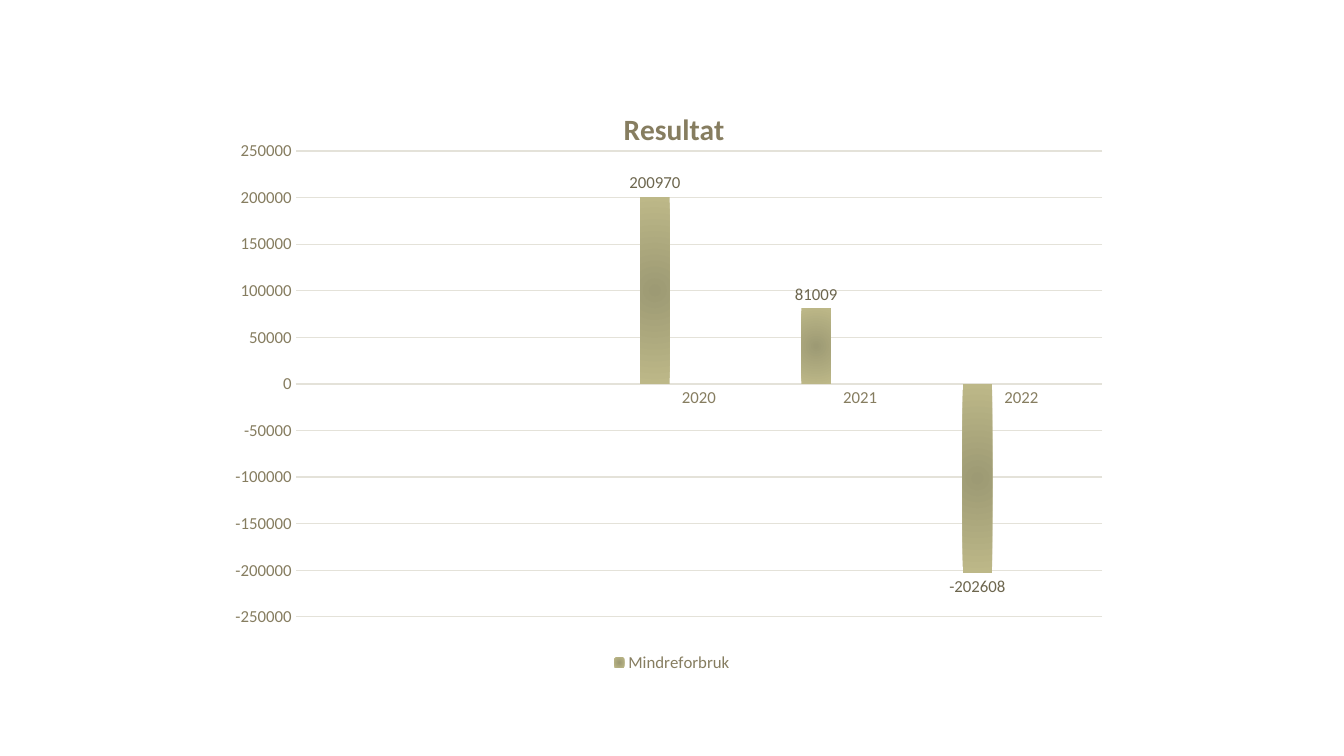
from dataclasses import dataclass

from lxml.etree import SubElement
from pptx import Presentation
from pptx.chart.data import CategoryChartData
from pptx.dml.color import RGBColor
from pptx.enum.chart import XL_CHART_TYPE as ChartType
from pptx.enum.chart import XL_LABEL_POSITION as LabelPosition
from pptx.enum.chart import XL_LEGEND_POSITION as LegendPosition
from pptx.enum.chart import XL_TICK_MARK as TickMark
from pptx.oxml import parse_xml
from pptx.oxml.ns import nsdecls, qn
from pptx.util import Inches, Pt

WIDTH, HEIGHT = Inches(13.33), Inches(7.5)
FONT = "Calibri"
COLORS = {
    "base": "2E2B21",
    "text": "867D60",
    "label": "6D664E",
    "grid": "E4E2D9",
}
YEARS = ["", "", "2020", "2021", "2022"]
LIMIT, STEP = 250000, 50000


@dataclass(frozen=True)
class Series:
    name: str
    values: tuple
    inner: str
    outer: str


BLANK = (None,) * len(YEARS)
SERIES = [
    Series("Mindreforbruk", (None, None, 200970, 81009, -202608), "9D9A74", "BDB888"),
    Series("Series 2", BLANK, "91B1B0", "A2CDCC"),
    Series("Series 3", BLANK, "C4BD65", "ECE271"),
    Series("Series 4", BLANK, "8B9892", "A1B2AB"),
]


def style_font(font, color: str, size: float = 12, bold: bool = False) -> None:
    font.name = FONT
    font.size = Pt(size)
    font.bold = bold
    font.color.rgb = RGBColor.from_string(COLORS[color])


def style_line(line, width: float) -> None:
    line.color.rgb = RGBColor.from_string(COLORS["grid"])
    line.width = Pt(width)


def manual_layout(target: str = "", **shares: float) -> object:
    layout = parse_xml(f"<c:layout {nsdecls('c')}><c:manualLayout/></c:layout>")
    manual = layout[0]
    if target:
        SubElement(manual, qn("c:layoutTarget")).set("val", target)
    for side in "xy":
        SubElement(manual, qn(f"c:{side}Mode")).set("val", "edge")
    for name, share in shares.items():
        SubElement(manual, qn(f"c:{name}")).set("val", str(share))
    return layout


def replace_layout(parent, layout, index: int) -> None:
    for old in parent.findall(qn("c:layout")):
        parent.remove(old)
    parent.insert(index, layout)


def style_series(bars, series: Series) -> None:
    bars.invert_if_negative = False
    fill = bars.format.fill
    fill.gradient()
    for stop, color in zip(fill.gradient_stops, (series.inner, series.outer)):
        stop.color.rgb = RGBColor.from_string(color)
    gradient = next(bars._element.iter(qn("a:gradFill")))
    gradient.remove(gradient.find(qn("a:lin")))
    circle = SubElement(gradient, qn("a:path"), {"path": "circle"})
    center = SubElement(circle, qn("a:fillToRect"))
    for side in "ltrb":
        center.set(side, "100000")
    labels = bars.data_labels
    labels.show_value = True
    labels.position = LabelPosition.OUTSIDE_END
    style_font(labels.font, "label")


def style_axes(chart) -> None:
    for axis in (chart.category_axis, chart.value_axis):
        axis.major_tick_mark = axis.minor_tick_mark = TickMark.NONE
        style_font(axis.tick_labels.font, "text")
    style_line(chart.category_axis.format.line, 1)
    values = chart.value_axis
    values.minimum_scale, values.maximum_scale = -LIMIT, LIMIT
    values.major_unit = STEP
    values.format.line.fill.background()
    style_line(values.major_gridlines.format.line, 0.75)


def style_title(chart, text: str) -> None:
    span = chart.chart_title.text_frame.paragraphs[0].add_run()
    span.text = text
    style_font(span.font, "text", size=21, bold=True)
    chart.chart_title.include_in_layout = False
    replace_layout(chart.chart_title._element, manual_layout(x=0.44, y=0.04), 1)


def style_legend(chart) -> None:
    chart.has_legend = True
    legend = chart.legend
    legend.position = LegendPosition.BOTTOM
    legend.include_in_layout = False
    style_font(legend.font, "text")
    for index in range(1, len(SERIES)):
        entry = parse_xml(
            f'<c:legendEntry {nsdecls("c")}><c:idx val="{index}"/>'
            '<c:delete val="1"/></c:legendEntry>'
        )
        legend._element.insert(index, entry)


def add_result_chart(page) -> None:
    data = CategoryChartData()
    data.categories = YEARS
    for series in SERIES:
        data.add_series(series.name, series.values)
    left, top = round(WIDTH / 6), round(HEIGHT * 0.105)
    chart = page.shapes.add_chart(
        ChartType.COLUMN_CLUSTERED, left, top,
        round(WIDTH * 2 / 3), round(HEIGHT * 0.79), data,
    ).chart
    style_font(chart.font, "base", size=10)
    plot = chart.plots[0]
    plot.gap_width, plot.overlap, plot.vary_by_categories = 150, 0, False
    for bars, series in zip(plot.series, SERIES):
        style_series(bars, series)
    style_axes(chart)
    style_title(chart, "Resultat")
    style_legend(chart)
    area = chart._chartSpace.chart.plotArea
    replace_layout(area, manual_layout("inner", x=0.08, y=0.12, w=0.9, h=0.78), 0)


def main() -> None:
    deck = Presentation()
    deck.slide_width, deck.slide_height = WIDTH, HEIGHT
    add_result_chart(deck.slides.add_slide(deck.slide_layouts[6]))
    deck.save("out.pptx")


if __name__ == "__main__":
    main()
